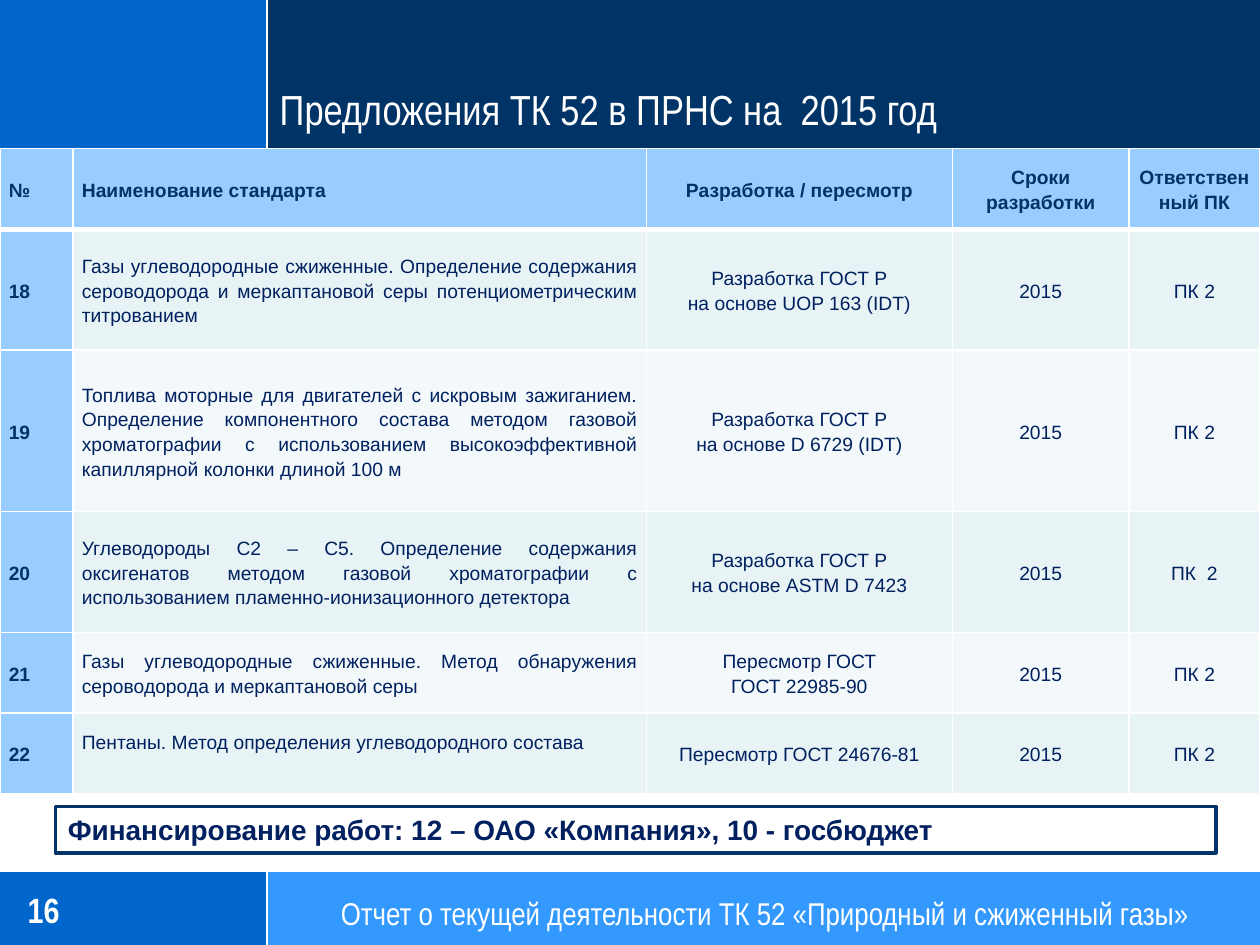
from typing import Any, NamedTuple

from lxml.etree import SubElement
from pptx import Presentation
from pptx.dml.color import RGBColor
from pptx.enum.shapes import MSO_CONNECTOR, MSO_SHAPE
from pptx.enum.text import MSO_ANCHOR, MSO_AUTO_SIZE, PP_ALIGN
from pptx.oxml import parse_xml
from pptx.oxml.ns import nsdecls, qn
from pptx.util import Inches, Pt

# Grid of 100 columns by 75 rows
COLUMNS, ROWS = 100, 75
SLIDE_WIDTH, SLIDE_HEIGHT = Inches(10), Inches(7.5)
SPLIT, HEADER_END, FOOTER_START = 21.2, 11.8, 69.1

WHITE, NAVY, INK = "FFFFFF", "003366", "002060"
BLUE, BRIGHT, PALE = "0066CC", "3399FF", "99CCFF"
STRIPES = ("E7F3F4", "F3F9FA")


class Area(NamedTuple):
    left: float
    top: float
    width: float
    height: float


class Standard(NamedTuple):
    number: str
    name: str
    work: str
    year: str
    committee: str


BANDS = [
    (Area(0, FOOTER_START, SPLIT, ROWS - FOOTER_START), BLUE),
    (Area(SPLIT, FOOTER_START, COLUMNS - SPLIT, ROWS - FOOTER_START), BRIGHT),
    (Area(0, 0, SPLIT, HEADER_END), BLUE),
    (Area(SPLIT, 0, COLUMNS - SPLIT, HEADER_END), NAVY),
]
RULES = [
    Area(SPLIT, FOOTER_START, 0, ROWS - FOOTER_START),
    Area(SPLIT, 0, 0, HEADER_END),
    Area(0, FOOTER_START, COLUMNS, 0),
    Area(0, HEADER_END, COLUMNS, 0),
]
TABLE_COLUMNS = (5.8, 45.5, 24.3, 14, 10.4)
TABLE_ROWS = (6.4, 9.6, 12.8, 9.6, 6.4, 6.4)
ALIGNMENTS = (PP_ALIGN.LEFT, PP_ALIGN.JUSTIFY) + (PP_ALIGN.CENTER,) * 3
HEADINGS = Standard("№", "Наименование стандарта", "Разработка / пересмотр",
                    "Сроки разработки", "Ответственный ПК")
STANDARDS = [
    Standard("18", "Газы углеводородные сжиженные. Определение содержания сероводорода "
             "и меркаптановой серы потенциометрическим титрованием",
             "Разработка ГОСТ Р\nна основе UOP 163 (IDT)", "2015", "ПК 2"),
    Standard("19", "Топлива моторные для двигателей с искровым зажиганием. Определение "
             "компонентного состава методом газовой хроматографии с использованием "
             "высокоэффективной капиллярной колонки длиной 100 м",
             "Разработка ГОСТ Р\nна основе D 6729 (IDT)", "2015", "ПК 2"),
    Standard("20", "Углеводороды С2 – С5. Определение содержания оксигенатов методом "
             "газовой хроматографии с использованием пламенно-ионизационного детектора",
             "Разработка ГОСТ Р\nна основе ASTM D 7423", "2015", "ПК  2"),
    Standard("21", "Газы углеводородные сжиженные. Метод обнаружения сероводорода "
             "и меркаптановой серы",
             "Пересмотр ГОСТ\nГОСТ 22985-90", "2015", "ПК 2"),
    Standard("22", "Пентаны. Метод определения углеводородного состава",
             "Пересмотр ГОСТ 24676-81", "2015", "ПК 2"),
]


def color(value: str) -> RGBColor:
    return RGBColor.from_string(value)


def across(columns: float) -> int:
    return round(SLIDE_WIDTH * columns / COLUMNS)


def down(rows: float) -> int:
    return round(SLIDE_HEIGHT * rows / ROWS)


def place(area: Area) -> tuple[int, int, int, int]:
    return across(area.left), down(area.top), across(area.width), down(area.height)


def assign(target: Any, values: dict[str, Any]) -> None:
    for name, value in values.items():
        setattr(target, name, value)


def margins(horizontal: float, vertical: float) -> dict[str, int]:
    return {"margin_left": Inches(horizontal), "margin_right": Inches(horizontal),
            "margin_top": Inches(vertical), "margin_bottom": Inches(vertical)}


def write(frame: Any, text: str, size: float, hue: str, font: str = "Arial",
          bold: bool = False, **layout: Any) -> None:
    frame.text = text
    for paragraph in frame.paragraphs:
        assign(paragraph, {"alignment": PP_ALIGN.LEFT, **layout})
        assign(paragraph.font, {"name": font, "size": Pt(size), "bold": bold})
        paragraph.font.color.rgb = color(hue)


def add_box(slide: Any, area: Area, fill: str | None, line: str | None = None) -> Any:
    shape = slide.shapes.add_shape(MSO_SHAPE.RECTANGLE, *place(area))
    shape.shadow.inherit = False
    if fill:
        shape.fill.solid()
        shape.fill.fore_color.rgb = color(fill)
    else:
        shape.fill.background()
    if line:
        shape.line.color.rgb = color(line)
        shape.line.width = Pt(2)
    else:
        shape.line.fill.background()
    return shape


def add_rule(slide: Any, area: Area) -> None:
    left, top, width, height = place(area)
    rule = slide.shapes.add_connector(
        MSO_CONNECTOR.STRAIGHT, left, top, left + width, top + height)
    rule.line.color.rgb = color(WHITE)
    rule.line.width = Pt(1.25)
    SubElement(rule._element.spPr, qn("a:effectLst"))


def add_caption(slide: Any, area: Area, text: str, size: float, **style: Any) -> None:
    frame = slide.shapes.add_textbox(*place(area)).text_frame
    assign(frame, {"word_wrap": True, "vertical_anchor": MSO_ANCHOR.MIDDLE, **margins(0, 0)})
    write(frame, text, size, WHITE, "Arial Narrow", **style)


def add_borders(cell: Any, top: float, bottom: float) -> None:
    properties = cell._tc.get_or_add_tcPr()
    for index, (side, width) in enumerate(zip("LRTB", (1, 1, top, bottom))):
        properties.insert(index, parse_xml(
            f'<a:ln{side} {nsdecls("a")} w="{Pt(width)}"><a:solidFill>'
            f'<a:srgbClr val="{WHITE}"/></a:solidFill></a:ln{side}>'))


def add_standards(slide: Any) -> None:
    area = Area(0, HEADER_END, COLUMNS, sum(TABLE_ROWS))
    table = slide.shapes.add_table(len(TABLE_ROWS), len(TABLE_COLUMNS), *place(area)).table
    for column, width in zip(table.columns, TABLE_COLUMNS):
        column.width = across(width)
    for row, height in zip(table.rows, TABLE_ROWS):
        row.height = down(height)
    for i, record in enumerate([HEADINGS, *STANDARDS]):
        for j, text in enumerate(record):
            cell = table.cell(i, j)
            label = i == 0 or j == 0
            alignment = PP_ALIGN.LEFT if i == 0 and j == 1 else ALIGNMENTS[j]
            assign(cell, {"vertical_anchor": MSO_ANCHOR.MIDDLE, **margins(0.07, 0)})
            write(cell.text_frame, text, 11, NAVY if label else INK, bold=label,
                  alignment=alignment, line_spacing=1.15)
            cell.fill.solid()
            cell.fill.fore_color.rgb = color(PALE if label else STRIPES[(i - 1) % 2])
            add_borders(cell, top=3 if i == 1 else 1, bottom=3 if i == 0 else 1)
    # The last name sits half a line above the middle
    table.cell(len(STANDARDS), 1).margin_bottom = Inches(0.19)


def main() -> None:
    presentation = Presentation()
    assign(presentation, {"slide_width": SLIDE_WIDTH, "slide_height": SLIDE_HEIGHT})
    slide = presentation.slides.add_slide(presentation.slide_layouts[5])

    # Header and footer bands
    for area, fill in BANDS:
        add_box(slide, area, fill)
    for area in RULES:
        add_rule(slide, area)

    # Title, raised above the bands
    title = slide.shapes.title
    slide.shapes._spTree.append(title._element)
    assign(title, dict(zip(("left", "top", "width", "height"),
                           place(Area(22.2, 5.6, 77.7, 5)))))
    assign(title.text_frame, {"auto_size": MSO_AUTO_SIZE.NONE, "word_wrap": True,
                              "vertical_anchor": MSO_ANCHOR.BOTTOM, **margins(0, 0)})
    write(title.text_frame, "Предложения ТК 52 в ПРНС на  2015 год", 24, WHITE, "Arial Narrow")

    # Footer captions
    add_caption(slide, Area(2.2, 69.6, 16.3, 5.2), "16", 20, bold=True)
    add_caption(slide, Area(21.4, 69.9, 78.6, 5.1),
                "Отчет о текущей деятельности ТК 52 «Природный и сжиженный газы»", 18,
                alignment=PP_ALIGN.CENTER)

    # Proposed standards and their funding
    add_standards(slide)
    funding = add_box(slide, Area(4.4, 64, 92.1, 3.7), None, NAVY)
    assign(funding.text_frame, {"word_wrap": True, "vertical_anchor": MSO_ANCHOR.TOP,
                                **margins(0.1, 0.05)})
    write(funding.text_frame, "Финансирование работ: 12 – ОАО «Компания», 10 - госбюджет",
          16, INK, bold=True)

    presentation.save("out.pptx")


if __name__ == "__main__":
    main()
